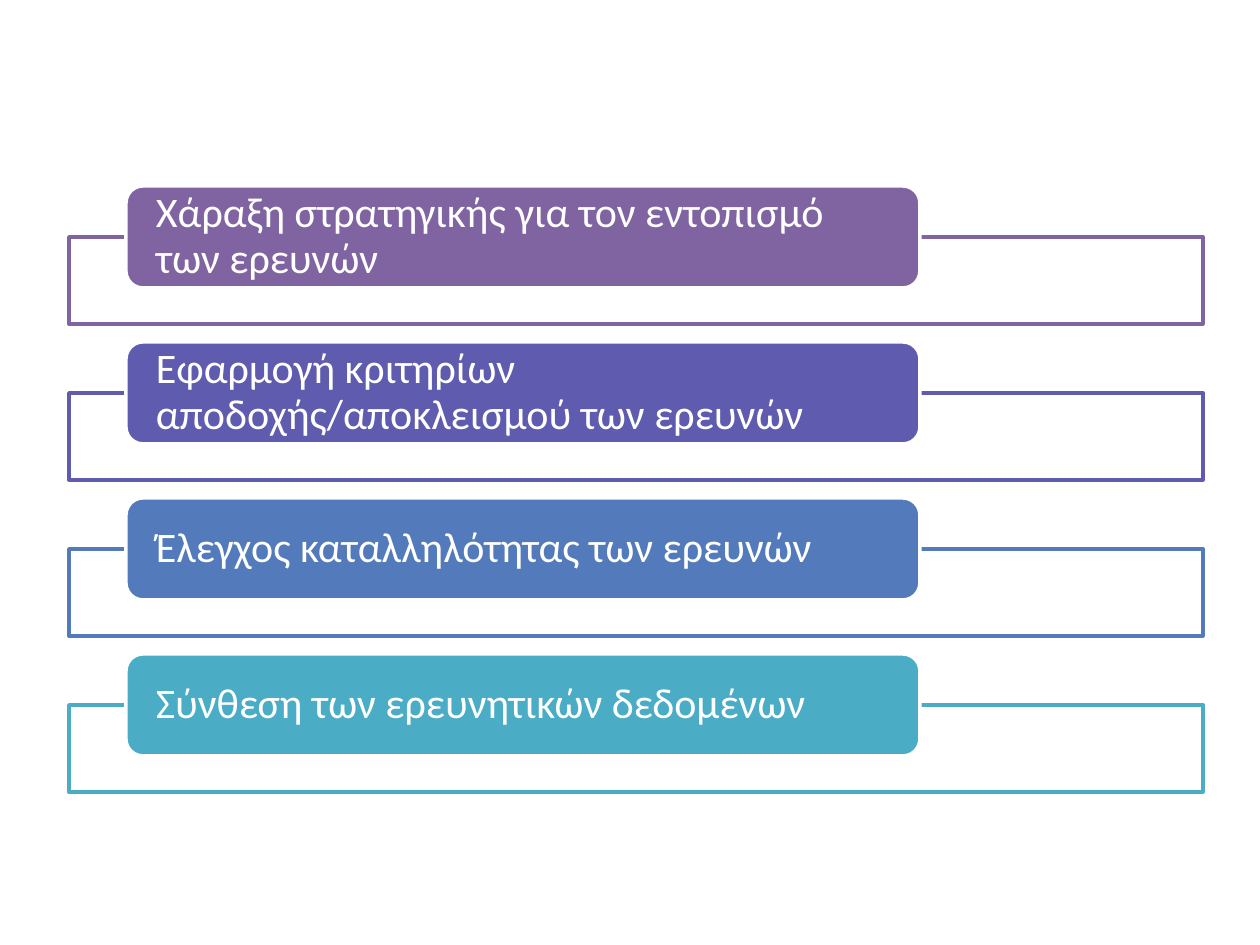
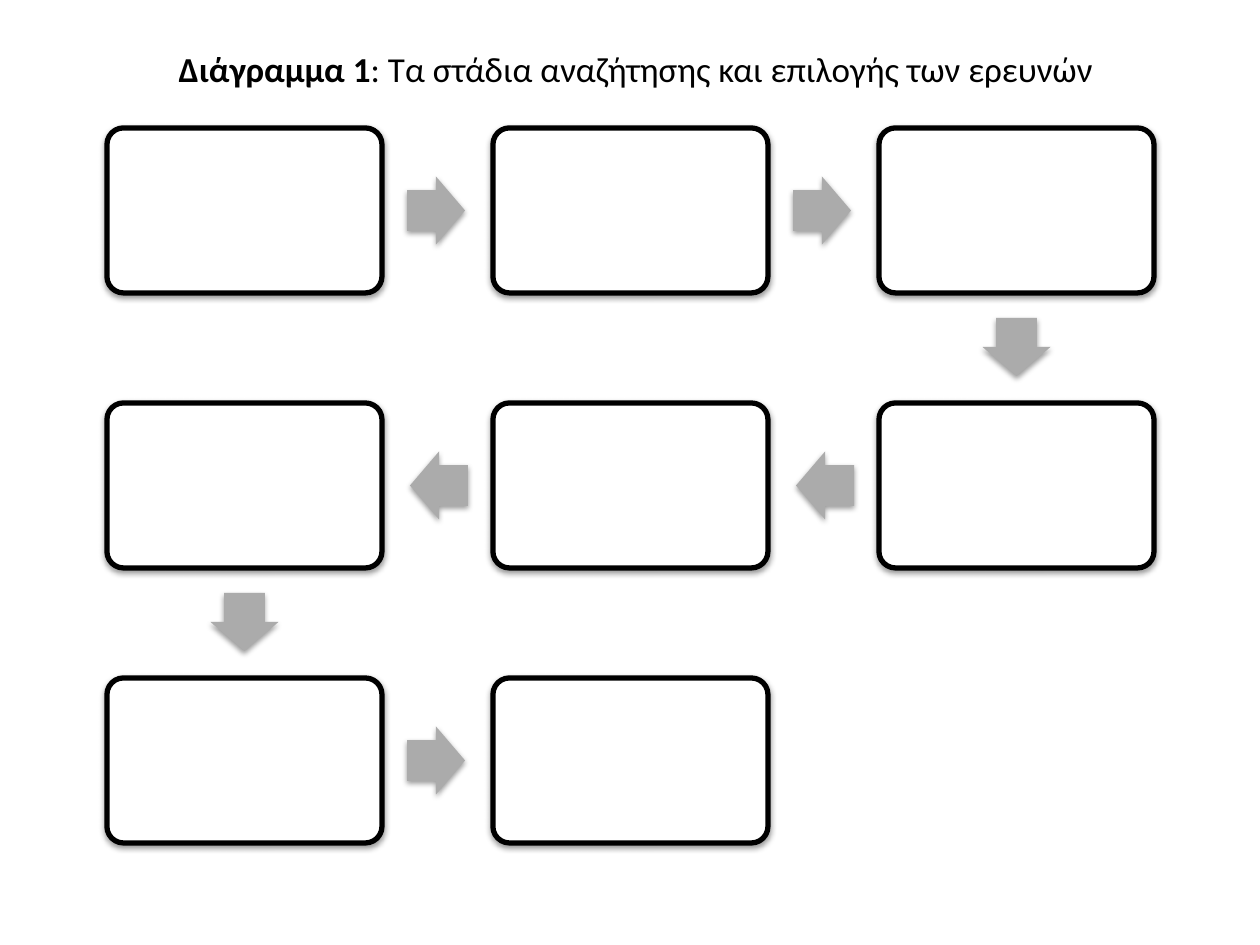
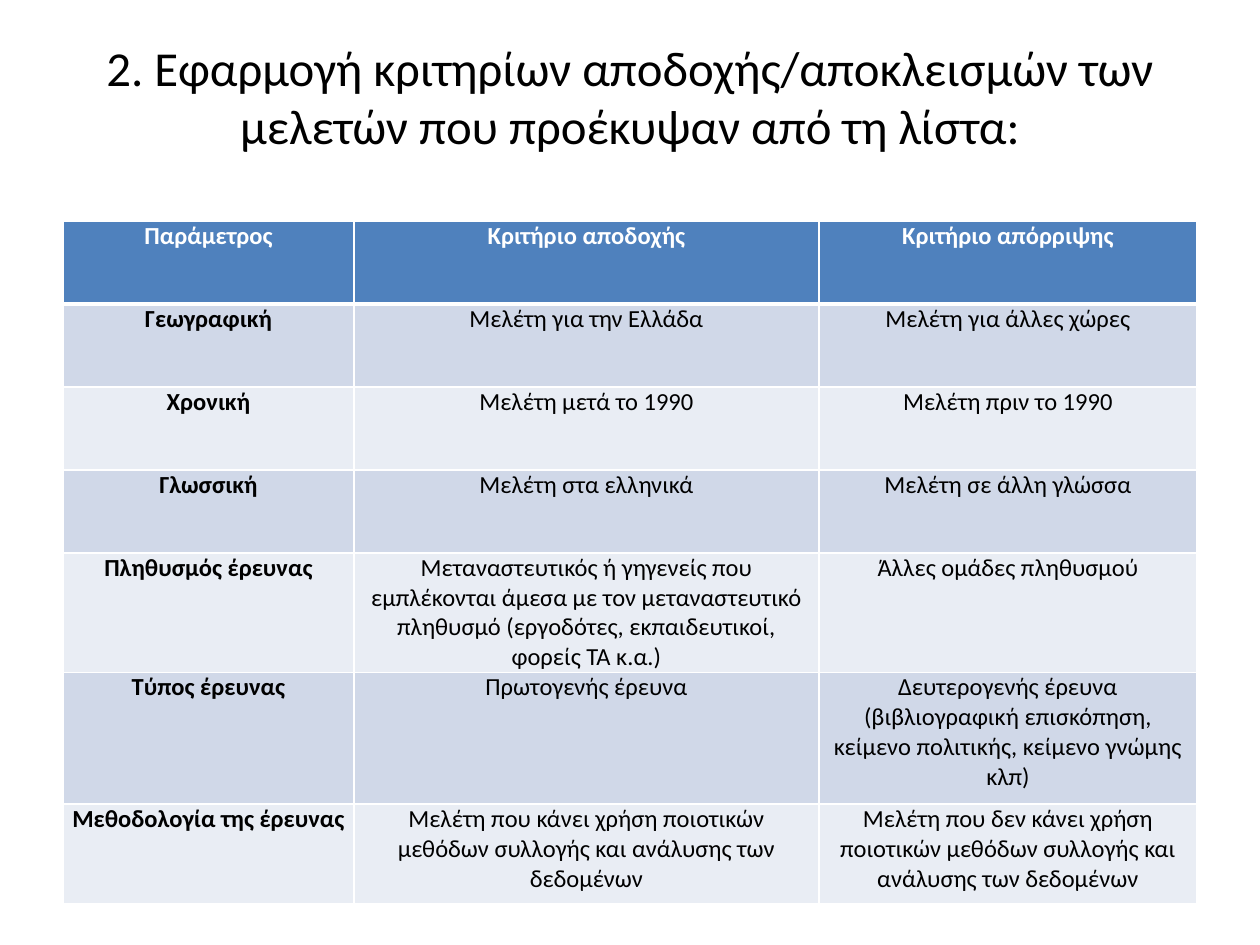
import pptx
import pptx.dml.color
import pptx.enum.shapes
import pptx.enum.text
import pptx.oxml
import pptx.oxml.ns
import pptx.util

HUES = {"black": "000000", "white": "FFFFFF", "gray": "ABABAB",
        "plum": "8064A2", "violet": "5F5BAE", "blue": "537ABA", "teal": "4BACC6",
        "head": "4F81BD", "dark": "D0D8E8", "light": "E9EDF4"}
FONT = "Calibri"
FORM = pptx.enum.shapes.MSO_SHAPE
ALIGN = pptx.enum.text.PP_ALIGN
ANCHOR = pptx.enum.text.MSO_ANCHOR

STEPS = [("Χάραξη στρατηγικής για τον εντοπισμό των ερευνών", "plum"),
         ("Εφαρμογή κριτηρίων αποδοχής/αποκλεισμού των ερευνών", "violet"),
         ("Έλεγχος καταλληλότητας των ερευνών", "blue"),
         ("Σύνθεση των ερευνητικών δεδομένων", "teal")]
RULES = [
    ("Παράμετρος", "Κριτήριο αποδοχής", "Κριτήριο απόρριψης"),
    ("Γεωγραφική", "Μελέτη για την Ελλάδα", "Μελέτη για άλλες χώρες"),
    ("Χρονική", "Μελέτη μετά το 1990", "Μελέτη πριν το 1990"),
    ("Γλωσσική", "Μελέτη στα ελληνικά", "Μελέτη σε άλλη γλώσσα"),
    ("Πληθυσμός έρευνας",
     "Μεταναστευτικός ή γηγενείς που εμπλέκονται άμεσα με τον μεταναστευτικό "
     "πληθυσμό (εργοδότες, εκπαιδευτικοί, φορείς ΤΑ κ.α.)",
     "Άλλες ομάδες πληθυσμού"),
    ("Τύπος έρευνας", "Πρωτογενής έρευνα",
     "Δευτερογενής έρευνα (βιβλιογραφική επισκόπηση, κείμενο πολιτικής, "
     "κείμενο γνώμης κλπ)"),
    ("Μεθοδολογία της έρευνας",
     "Μελέτη που κάνει χρήση ποιοτικών μεθόδων συλλογής και ανάλυσης των δεδομένων",
     "Μελέτη που δεν κάνει χρήση ποιοτικών μεθόδων συλλογής και ανάλυσης των δεδομένων"),
]


def px(size):
    """Turn px into EMU."""
    return pptx.util.Emu(round(size * 914400 / 126))


def tint(name):
    """Give the colour of that name."""
    return pptx.dml.color.RGBColor.from_string(HUES[name])


def write(frame, text, size=14, hue="black", bold=False, lead="",
          align=ALIGN.CENTER, line=None, gap=None):
    """Write one paragraph, with an optional bold lead."""
    frame.word_wrap = True
    para = frame.paragraphs[0]
    para.alignment = align
    para.line_spacing = line
    if gap is not None:
        para.space_before = para.space_after = pptx.util.Pt(gap)
    for part, heavy in ((lead, True), (text, bold)):
        if part:
            run = para.add_run()
            run.text = part
            run.font.name = FONT
            run.font.size = pptx.util.Pt(size)
            run.font.bold = heavy
            run.font.color.rgb = tint(hue)


def inset(frame, left, top, right, bottom):
    """Set the four margins of a text frame or cell."""
    frame.margin_left, frame.margin_top = px(left), px(top)
    frame.margin_right, frame.margin_bottom = px(right), px(bottom)


def draw(slide, form, box, fill, edge=None, width=2, shade=False):
    """Draw a preset shape, with an optional edge and soft shadow."""
    shape = slide.shapes.add_shape(form, *map(px, box))
    shape.shadow.inherit = False
    shape.fill.solid()
    shape.fill.fore_color.rgb = tint(fill)
    if edge:
        shape.line.color.rgb = tint(edge)
        shape.line.width = pptx.util.Pt(width)
    else:
        shape.line.fill.background()
    if shade:
        glow = pptx.oxml.parse_xml(
            f'<a:outerShdw {pptx.oxml.ns.nsdecls("a")} blurRad="40000" dist="20000" '
            f'dir="5400000" rotWithShape="0"><a:srgbClr val="{HUES["black"]}">'
            '<a:alpha val="38000"/></a:srgbClr></a:outerShdw>')
        shape.element.spPr.find(pptx.oxml.ns.qn("a:effectLst")).append(glow)
    return shape


def title(slide, box, text, foot=6, **form):
    """Place and format the title."""
    head = slide.shapes.title
    head.left, head.top, head.width, head.height = map(px, box)
    frame = head.text_frame
    frame.auto_size = pptx.enum.text.MSO_AUTO_SIZE.NONE
    frame.vertical_anchor = ANCHOR.MIDDLE
    inset(frame, 12, 6, 12, foot)
    write(frame, text, **form)


def stage(slide, box, text, hue):
    """Draw an open frame with a label on its top edge."""
    left, top, width, height = box
    draw(slide, FORM.RECTANGLE, box, "white", hue)
    chip = draw(slide, FORM.ROUNDED_RECTANGLE, (left + 57, top - 51, 794, 102), hue, "white")
    frame = chip.text_frame
    frame.vertical_anchor = ANCHOR.MIDDLE
    inset(frame, 25, 0, 25, 0)
    write(frame, text, size=24, hue="white", align=ALIGN.LEFT, line=0.9)


def arrow(slide, box, turn):
    """Draw an arrow that leaves a box to the right, downwards or to the left."""
    left, top, width, height = box
    gap, long, tall = 25, 58, 68
    across, down = {0: (1, 0), 90: (0, 1), 180: (-1, 0)}[turn]
    mid = left + width / 2 + across * (width / 2 + gap + long / 2)
    level = top + height / 2 + down * (height / 2 + gap + long / 2)
    shape = draw(slide, FORM.RIGHT_ARROW, (mid - long / 2, level - tall / 2, long, tall),
                 "gray", shade=True)
    shape.adjustments[0] = 0.6
    shape.rotation = turn


def snake(slide, box, count=8, cols=3):
    """Draw boxes in a path that turns back at each row's end."""
    left, top, wide, high = box
    for step in range(count):
        row, col = divmod(step, cols)
        ends = col == cols - 1
        back = row % 2
        if back:
            col = cols - 1 - col
        cell = (left + col * 386, top + row * 275, wide, high)
        card = draw(slide, FORM.ROUNDED_RECTANGLE, cell, "white", "black", 3, True)
        card.adjustments[0] = 0.1
        if step < count - 1:
            arrow(slide, cell, 90 if ends else 180 * back)


def border(cell, **widths):
    """Give a cell white edges of the given widths in points."""
    props = cell._tc.get_or_add_tcPr()
    for side, width in widths.items():
        props.append(pptx.oxml.parse_xml(
            f'<a:ln{side} {pptx.oxml.ns.nsdecls("a")} w="{width * 12700}"><a:solidFill>'
            f'<a:srgbClr val="{HUES["white"]}"/></a:solidFill></a:ln{side}>'))


def grid(slide, box, cols, rows):
    """Build the table of criteria."""
    table = slide.shapes.add_table(len(RULES), len(cols), *map(px, box)).table
    for col, width in zip(table.columns, cols):
        col.width = px(width)
    for i, (line, height) in enumerate(zip(RULES, rows)):
        table.rows[i].height = px(height)
        fill = "head" if i == 0 else "dark" if i % 2 else "light"
        for j, text in enumerate(line):
            cell = table.cell(i, j)
            inset(cell, 9, 0, 9, 0)
            border(cell, L=1, R=1, T=3 if i == 1 else 1, B=3 if i == 0 else 1)
            cell.fill.solid()
            cell.fill.fore_color.rgb = tint(fill)
            write(cell.text_frame, text, hue="black" if i else "white",
                  bold=i == 0 or j == 0, gap=6)


def main():
    """Build and save the three slides."""
    deck = pptx.Presentation()
    deck.slide_width, deck.slide_height = px(1260), px(945)
    plain, named = deck.slide_layouts[6], deck.slide_layouts[5]

    slide = deck.slides.add_slide(plain)
    for i, (text, hue) in enumerate(STEPS):
        stage(slide, (69, 237 + i * 156, 1134, 87), text, hue)

    slide = deck.slides.add_slide(named)
    title(slide, (69, 39, 1134, 59), ": Τα στάδια αναζήτησης και επιλογής των ερευνών",
          lead="Διάγραμμα 1", size=20)
    snake(slide, (107, 128, 275, 165))

    slide = deck.slides.add_slide(named)
    title(slide, (63, 38, 1134, 130),
          "2. Εφαρμογή κριτηρίων αποδοχής/αποκλεισμών των μελετών που προέκυψαν από τη λίστα:",
          foot=20, size=27.9)
    grid(slide, (63, 221, 1134, 680), (291, 465, 378), [83] * 5 + [132, 100])
    deck.save("out.pptx")


if __name__ == "__main__":
    main()
